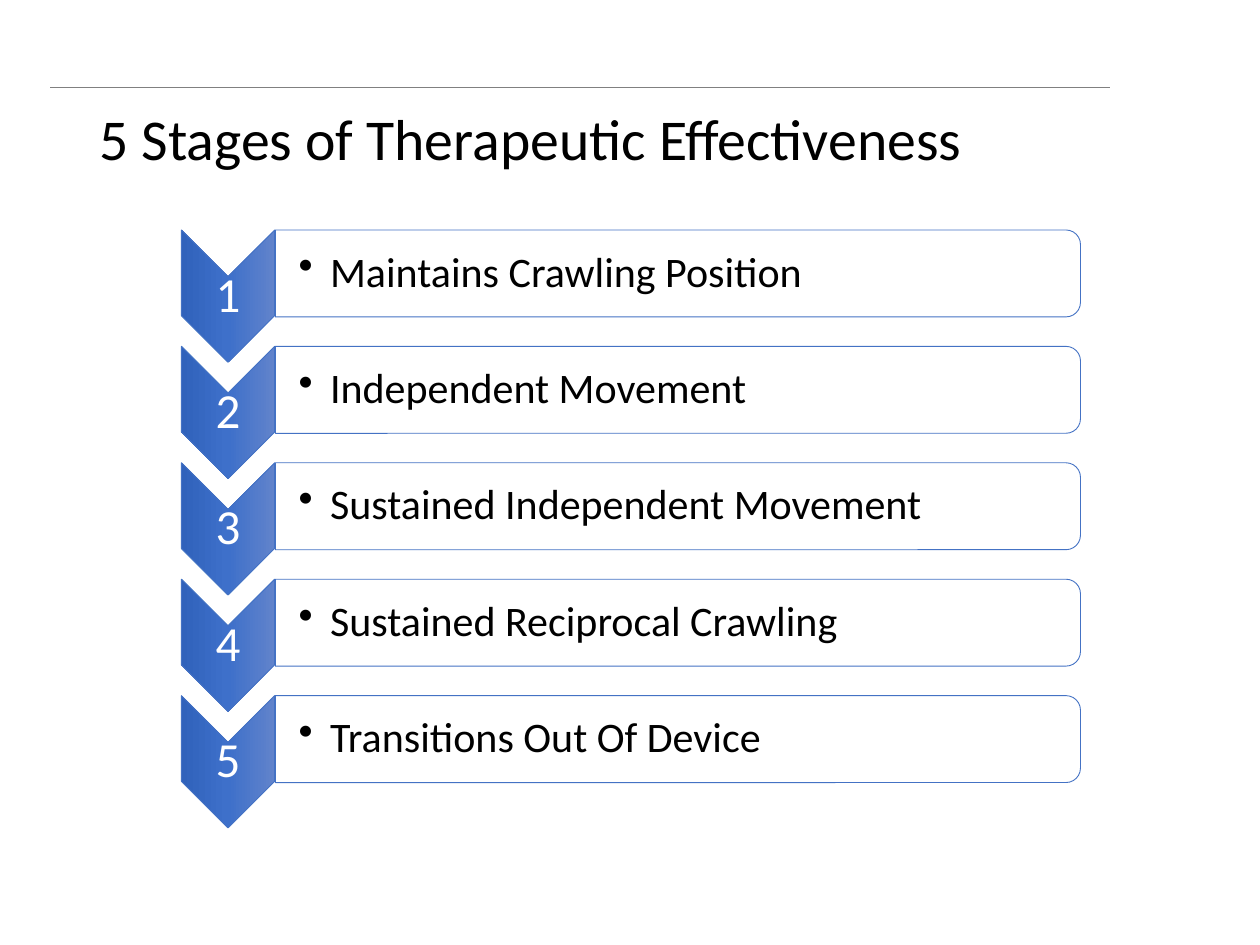
from dataclasses import dataclass

from lxml.etree import SubElement
from copy import deepcopy
from pptx import Presentation
from pptx.dml.color import RGBColor
from pptx.enum.shapes import MSO_CONNECTOR, MSO_SHAPE
from pptx.enum.text import MSO_ANCHOR, PP_ALIGN
from pptx.oxml.ns import qn
from pptx.util import Inches, Pt


@dataclass(frozen=True)
class Theme:
    font: str = "Calibri"
    black: RGBColor = RGBColor.from_string("000000")
    white: RGBColor = RGBColor.from_string("FFFFFF")
    rule: RGBColor = RGBColor.from_string("808080")
    outline: RGBColor = RGBColor.from_string("4472C4")
    gradient: tuple = ((0, "6183CB"), (0.5, "3E70CA"), (1, "3062BB"))
    title_size: int = 33
    number_size: int = 28
    label_size: int = 24


theme = Theme()
deck = Presentation()
deck.slide_width, deck.slide_height = Inches(10), Inches(7.5)
slide = deck.slides.add_slide(deck.slide_layouts[6])


def add_text(text, left, top, width, height, size, color, insets=None):
    """Add a vertically centred one-paragraph box and return its paragraph."""
    box = slide.shapes.add_textbox(Inches(left), Inches(top), Inches(width), Inches(height))
    frame = box.text_frame
    frame.word_wrap = True
    frame.vertical_anchor = MSO_ANCHOR.MIDDLE
    if insets:
        frame.margin_left = Inches(insets[0])
        frame.margin_top = frame.margin_right = frame.margin_bottom = Inches(insets[1])
    frame.text = text
    para = frame.paragraphs[0]
    para.line_spacing = 0.9
    font = para.runs[0].font
    font.name, font.size, font.color.rgb = theme.font, Pt(size), color
    return para


def add_turned_shape(kind, center_x, center_y, width, height):
    """Add an outlined shape turned by 90 degrees about its centre."""
    shape = slide.shapes.add_shape(
        kind, Inches(center_x - width / 2), Inches(center_y - height / 2),
        Inches(width), Inches(height))
    shape.rotation = 90
    shape.shadow.inherit = False
    shape.line.color.rgb = theme.outline
    shape.line.width = Pt(0.5)
    return shape


# Heading
rule = slide.shapes.add_connector(
    MSO_CONNECTOR.STRAIGHT, Inches(0.4), Inches(0.69), Inches(8.81), Inches(0.69))
rule.line.color.rgb = theme.rule
rule.line.width = Pt(0.25)
SubElement(rule.element.spPr, qn("a:effectLst"))
add_text("5 Stages of Therapeutic Effectiveness", 0.69, 0.4, 8.62, 1.45,
         theme.title_size, theme.black)

# Stages: label and panel opacity in percent
stages = [
    ("Maintains Crawling Position", 45),
    ("Independent Movement", 90),
    ("Sustained Independent Movement", 90),
    ("Sustained Reciprocal Crawling", 90),
    ("Transitions Out Of Device", 90),
]
first_center, pitch = 2.35, 0.924
panel_rise = 0.18

for index, (label, opacity) in enumerate(stages):
    center_y = first_center + index * pitch
    panel_y = center_y - panel_rise

    chevron = add_turned_shape(MSO_SHAPE.CHEVRON, 1.81, center_y, 1.05, 0.74)
    chevron.fill.gradient()
    chevron.fill.gradient_angle = 270
    stop_list = chevron.element.spPr.find(".//" + qn("a:gsLst"))
    stop_list.append(deepcopy(stop_list[-1]))
    for stop, (position, color) in zip(chevron.fill.gradient_stops, theme.gradient):
        stop.position = position
        stop.color.rgb = RGBColor.from_string(color)

    number = add_text(str(index + 1), 1.44, center_y - 0.16, 0.74, 0.32,
                      theme.number_size, theme.white, (0.02, 0.02))
    number.alignment = PP_ALIGN.CENTER

    panel = add_turned_shape(MSO_SHAPE.ROUND_2_SAME_RECTANGLE, 5.38, panel_y, 0.69, 6.39)
    panel.fill.solid()
    panel.fill.fore_color.rgb = theme.white
    panel_color = panel.element.spPr.find(qn("a:solidFill"))[0]
    SubElement(panel_color, qn("a:alpha"), val=str(opacity * 1000))

    item = add_text(label, 2.18, panel_y - 0.31, 6.36, 0.62,
                    theme.label_size, theme.black, (0.19, 0.02))
    item.level = 1
    properties = item._p.get_or_add_pPr()
    properties.set("marL", str(Inches(0.25)))
    properties.set("indent", str(-Inches(0.25)))
    SubElement(properties, qn("a:buChar"), char="•")

deck.save("out.pptx")
